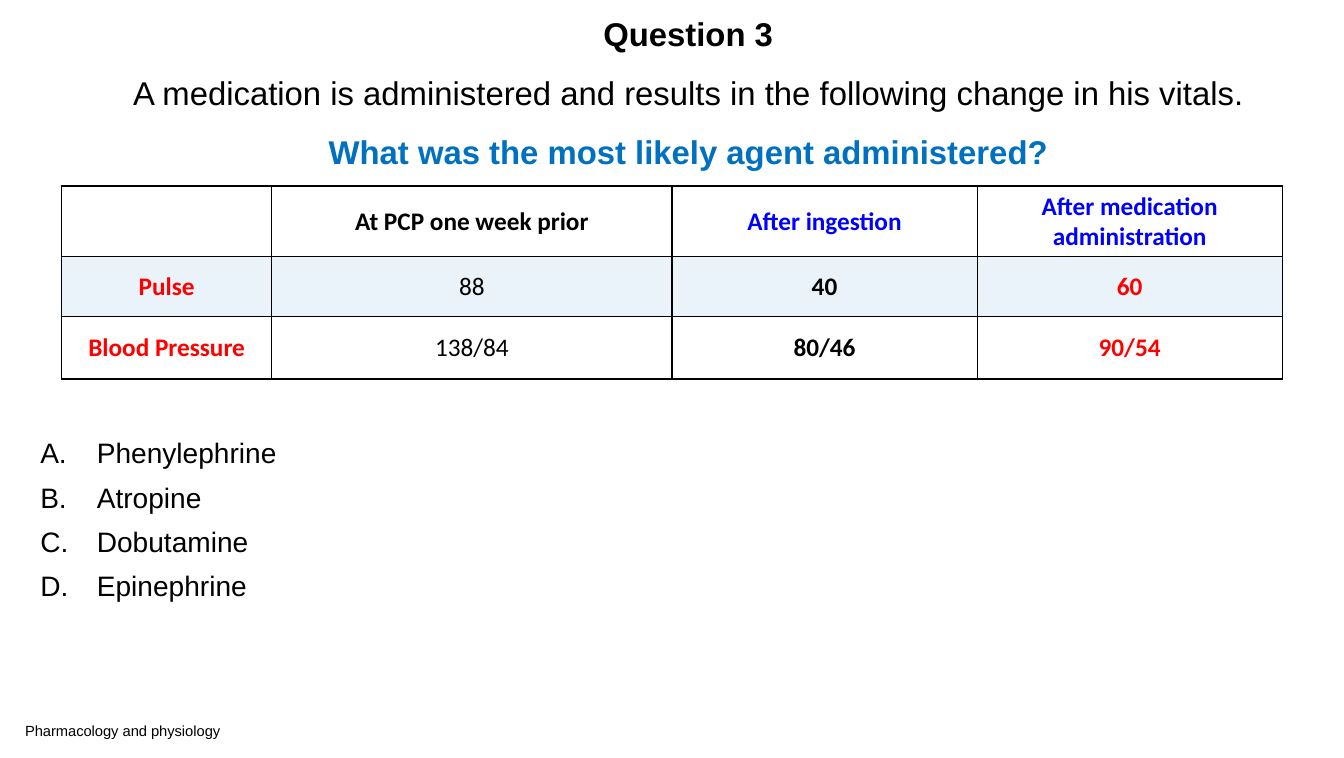
import pptx
import pptx.util
import pptx.dml.color
import pptx.enum.text
import pptx.oxml
import lxml.etree
from pptx.util import Inches, Pt
from pptx.dml.color import RGBColor
from pptx.enum.text import PP_ALIGN, MSO_ANCHOR

BLACK = RGBColor(0x00, 0x00, 0x00)
SKY = RGBColor(0x00, 0x70, 0xC0)
BLUE = RGBColor(0x00, 0x00, 0xFF)
RED = RGBColor(0xFF, 0x00, 0x00)
PALE = RGBColor(0xEB, 0xF3, 0xFA)


def add_text(p, text, size, color=BLACK, bold=False, name="Arial"):
    p.text = text
    p.font.name = name
    p.font.size = Pt(size)
    p.font.bold = bold
    p.font.color.rgb = color


def add_borders(cell):
    tcPr = cell._tc.get_or_add_tcPr()
    for i, side in enumerate(("lnL", "lnR", "lnT", "lnB")):
        ln = pptx.oxml.parse_xml(
            f'<a:{side} xmlns:a="http://schemas.openxmlformats.org/drawingml/2006/main" w="12700">'
            f'<a:solidFill><a:srgbClr val="{BLACK}"/></a:solidFill></a:{side}>')
        tcPr.insert(i, ln)


prs = pptx.Presentation()
prs.slide_width, prs.slide_height = Inches(13.3), Inches(7.5)
s = prs.slides.add_slide(prs.slide_layouts[6])

title = s.shapes.add_textbox(Inches(0.32), Inches(0.19), Inches(12.98), Inches(1.25))
tf = title.text_frame
tf.word_wrap = True
tf.vertical_anchor = MSO_ANCHOR.MIDDLE
question = [
    ("Question 3", BLACK, True),
    ("A medication is administered and results in the following change in his vitals.", BLACK, False),
    ("What was the most likely agent administered?", SKY, True),
]
for i, (text, color, bold) in enumerate(question):
    p = tf.add_paragraph() if i else tf.paragraphs[0]
    add_text(p, text, 23.4, color, bold)
    p.alignment = PP_ALIGN.CENTER
    p.line_spacing = 1.5

answers = s.shapes.add_textbox(Inches(0.3), Inches(4.3), Inches(6.15), Inches(2))
tf = answers.text_frame
tf.word_wrap = True
for i, drug in enumerate(["Phenylephrine", "Atropine", "Dobutamine", "Epinephrine"]):
    p = tf.add_paragraph() if i else tf.paragraphs[0]
    add_text(p, drug, 20)
    p.line_spacing = 0.9
    p.space_before = Pt(10)
    pPr = p._p.get_or_add_pPr()
    pPr.set("marL", str(Inches(0.56)))
    pPr.set("indent", str(-Inches(0.56)))
    bullet = pptx.oxml.parse_xml(
        '<a:buAutoNum xmlns:a="http://schemas.openxmlformats.org/drawingml/2006/main" type="alphaUcPeriod"/>')
    pPr.find(pptx.oxml.ns.qn("a:spcBef")).addnext(bullet)

vitals = [
    [("", BLACK, False), ("At PCP one week prior", BLACK, True),
     ("After ingestion", BLUE, True), ("After medication administration", BLUE, True)],
    [("Pulse", RED, True), ("88", BLACK, False), ("40", BLACK, True), ("60", RED, True)],
    [("Blood Pressure", RED, True), ("138/84", BLACK, False), ("80/46", BLACK, True), ("90/54", RED, True)],
]
table = s.shapes.add_table(3, 4, Inches(0.61), Inches(1.84), Inches(12.08), Inches(1.91)).table
table.first_row = table.horz_banding = False
for column, width in zip(table.columns, (2.08, 3.96, 3.02, 3.02)):
    column.width = Inches(width)
for row, height in zip(table.rows, (0.7, 0.59, 0.62)):
    row.height = Inches(height)
for r, row in enumerate(vitals):
    for c, (text, color, bold) in enumerate(row):
        cell = table.cell(r, c)
        cell.vertical_anchor = MSO_ANCHOR.MIDDLE
        if r == 1:
            cell.fill.solid()
            cell.fill.fore_color.rgb = PALE
        else:
            cell.fill.background()
        add_borders(cell)
        p = cell.text_frame.paragraphs[0]
        add_text(p, text, 18, color, bold, "Calibri")
        p.alignment = PP_ALIGN.CENTER

footer = s.shapes.add_textbox(Inches(0.15), Inches(7.09), Inches(2.17), Inches(0.28))
add_text(footer.text_frame.paragraphs[0], "Pharmacology and physiology", 10.5)

prs.save("out.pptx")
